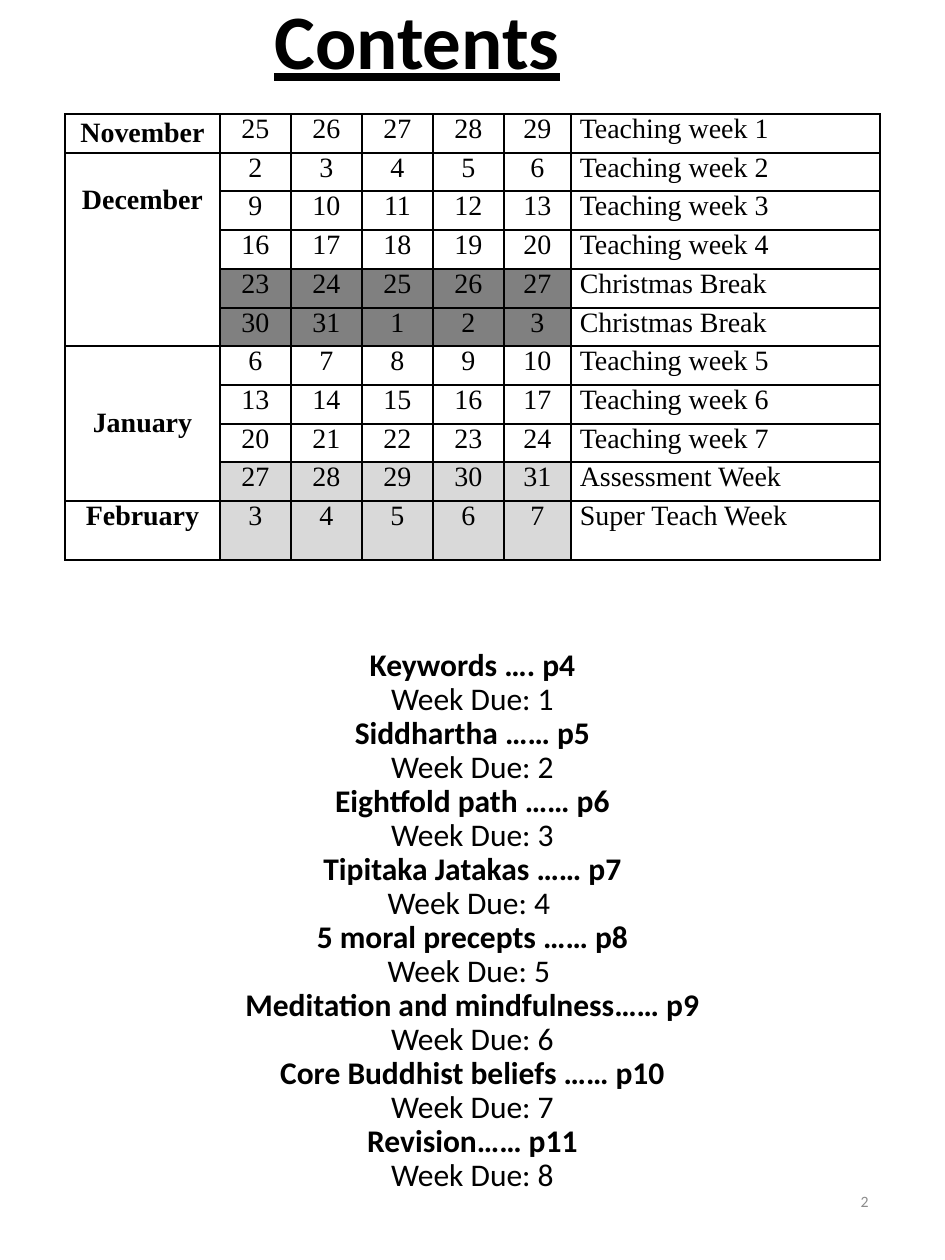
from copy import deepcopy

from lxml import etree
from pptx import Presentation
from pptx.dml.color import RGBColor
from pptx.enum.text import MSO_ANCHOR, MSO_AUTO_SIZE, PP_ALIGN
from pptx.oxml.ns import qn
from pptx.util import Emu, Pt

LEFT, MID, RIGHT = PP_ALIGN.LEFT, PP_ALIGN.CENTER, PP_ALIGN.RIGHT
TOP, CENTRE = MSO_ANCHOR.TOP, MSO_ANCHOR.MIDDLE
FIXED, GROW = MSO_AUTO_SIZE.NONE, MSO_AUTO_SIZE.SHAPE_TO_FIT_TEXT
SCALE = 914400 / 126
BLACK, WHITE, DARK, PALE, GREY = "000000", "FFFFFF", "808080", "D9D9D9", "8C8C8C"
SANS, SERIF = "Calibri", "Times New Roman"

# First day, note and day fill of each week
WEEKS = [
    (25, "Teaching week 1", WHITE),
    (2, "Teaching week 2", WHITE),
    (9, "Teaching week 3", WHITE),
    (16, "Teaching week 4", WHITE),
    (23, "Christmas Break", DARK),
    (30, "Christmas Break", DARK),
    (6, "Teaching week 5", WHITE),
    (13, "Teaching week 6", WHITE),
    (20, "Teaching week 7", WHITE),
    (27, "Assessment Week", PALE),
    (3, "Super Teach Week", PALE),
]
# Name, first row, last row, anchor and top margin of each month
MONTHS = [
    ("November", 0, 0, CENTRE, 0),
    ("December", 1, 5, TOP, 32),
    ("January", 6, 9, CENTRE, 0),
    ("February", 10, 10, TOP, 0),
]
TOPICS = [
    ("Keywords …. p4", "Week Due: 1"),
    ("Siddhartha …… p5", "Week Due: 2"),
    ("Eightfold path …… p6", "Week Due: 3"),
    ("Tipitaka Jatakas …… p7", "Week Due: 4 "),
    ("5 moral precepts …… p8", "Week Due: 5 "),
    ("Meditation and mindfulness…… p9", "Week Due: 6"),
    ("Core Buddhist beliefs …… p10", "Week Due: 7"),
    ("Revision…… p11", "Week Due: 8"),
]
COLS = [155, 71, 71, 71, 71, 67, 309]
EDGES = [round(38.7 * i) for i in range(len(WEEKS))] + [446]


def px(n):
    return Emu(round(n * SCALE))


def paint(color, code):
    color.rgb = RGBColor.from_string(code)


class Page:
    def __init__(self, slide):
        self.slide = slide

    def run(self, para, text, size, font=SANS, bold=False, line=False, color=BLACK):
        run = para.add_run()
        run.text = text
        face = run.font
        face.size, face.name, face.bold, face.underline = Pt(size), font, bold, line
        paint(face.color, color)
        return run

    def topics(self, x, y, w, h, size):
        """Fill the title with the topic list, one line per run."""
        box = self.slide.shapes.title
        box.left, box.top, box.width, box.height = map(px, (x, y, w, h))
        frame = box.text_frame
        frame.word_wrap, frame.auto_size = True, FIXED
        frame.vertical_anchor = CENTRE
        para = frame.paragraphs[0]
        para.alignment, para.line_spacing = MID, 0.9
        for pair in TOPICS:
            for text, bold in zip(pair, (True, False)):
                run = self.run(para, text, size, bold=bold)
                para.add_line_break()
                # A break needs the run's size, or its line grows taller
                style = run.font._element
                para._p[-1].append(deepcopy(style))
        end = etree.SubElement(para._p, qn("a:endParaRPr"))
        end.set("sz", str(size * 100))

    def label(self, x, y, w, h, text, size, align=LEFT, anchor=TOP,
              wrap=True, fit=FIXED, **style):
        frame = self.slide.shapes.add_textbox(*map(px, (x, y, w, h))).text_frame
        frame.word_wrap, frame.auto_size = wrap, fit
        frame.vertical_anchor = anchor
        para = frame.paragraphs[0]
        para.alignment = align
        self.run(para, text, size, **style)

    def cell(self, cell, text, fill=WHITE, align=MID, anchor=TOP, top=0, bold=False):
        cell.margin_left = cell.margin_right = px(9)
        cell.margin_top, cell.margin_bottom = px(top), 0
        cell.vertical_anchor = anchor
        self.edge(cell)
        cell.fill.solid()
        paint(cell.fill.fore_color, fill)
        if text:
            para = cell.text_frame.paragraphs[0]
            para.alignment = align
            self.run(para, text, 16, SERIF, bold)

    def edge(self, cell):
        """Draw a thin black line on all four sides."""
        props = cell._tc.get_or_add_tcPr()
        for side in ("a:lnL", "a:lnR", "a:lnT", "a:lnB"):
            line = etree.SubElement(props, qn(side), w=str(Pt(1)))
            fill = etree.SubElement(line, qn("a:solidFill"))
            etree.SubElement(fill, qn("a:srgbClr"), val=BLACK)

    def weeks(self, x, y):
        place = map(px, (x, y, sum(COLS), EDGES[-1]))
        table = self.slide.shapes.add_table(len(WEEKS), len(COLS), *place).table
        table.first_row = table.horz_banding = False
        for col, wide in zip(table.columns, COLS):
            col.width = px(wide)
        for i, (first, note, fill) in enumerate(WEEKS):
            table.rows[i].height = px(EDGES[i + 1] - EDGES[i])
            for j in range(5):
                day = (first + j - 1) % 31 + 1
                self.cell(table.cell(i, j + 1), str(day), fill)
            self.cell(table.cell(i, 6), note, align=LEFT)
        for name, start, stop, anchor, top in MONTHS:
            self.cell(table.cell(start, 0), name, anchor=anchor, top=top, bold=True)
            for i in range(start + 1, stop + 1):
                self.cell(table.cell(i, 0), "")
            if stop > start:
                table.cell(start, 0).merge(table.cell(stop, 0))


def main():
    deck = Presentation()
    deck.slide_width, deck.slide_height = px(945), px(1260)
    page = Page(deck.slides.add_slide(deck.slide_layouts[5]))
    page.topics(0, 620, 945, 640, 18)
    page.label(262, -14, 314, 106, "Contents", 44, wrap=False, fit=GROW,
               bold=True, line=True)
    page.label(668, 1168, 213, 67, "2", 9, RIGHT, CENTRE, color=GREY)
    page.weeks(65, 114)
    deck.save("out.pptx")


if __name__ == "__main__":
    main()
